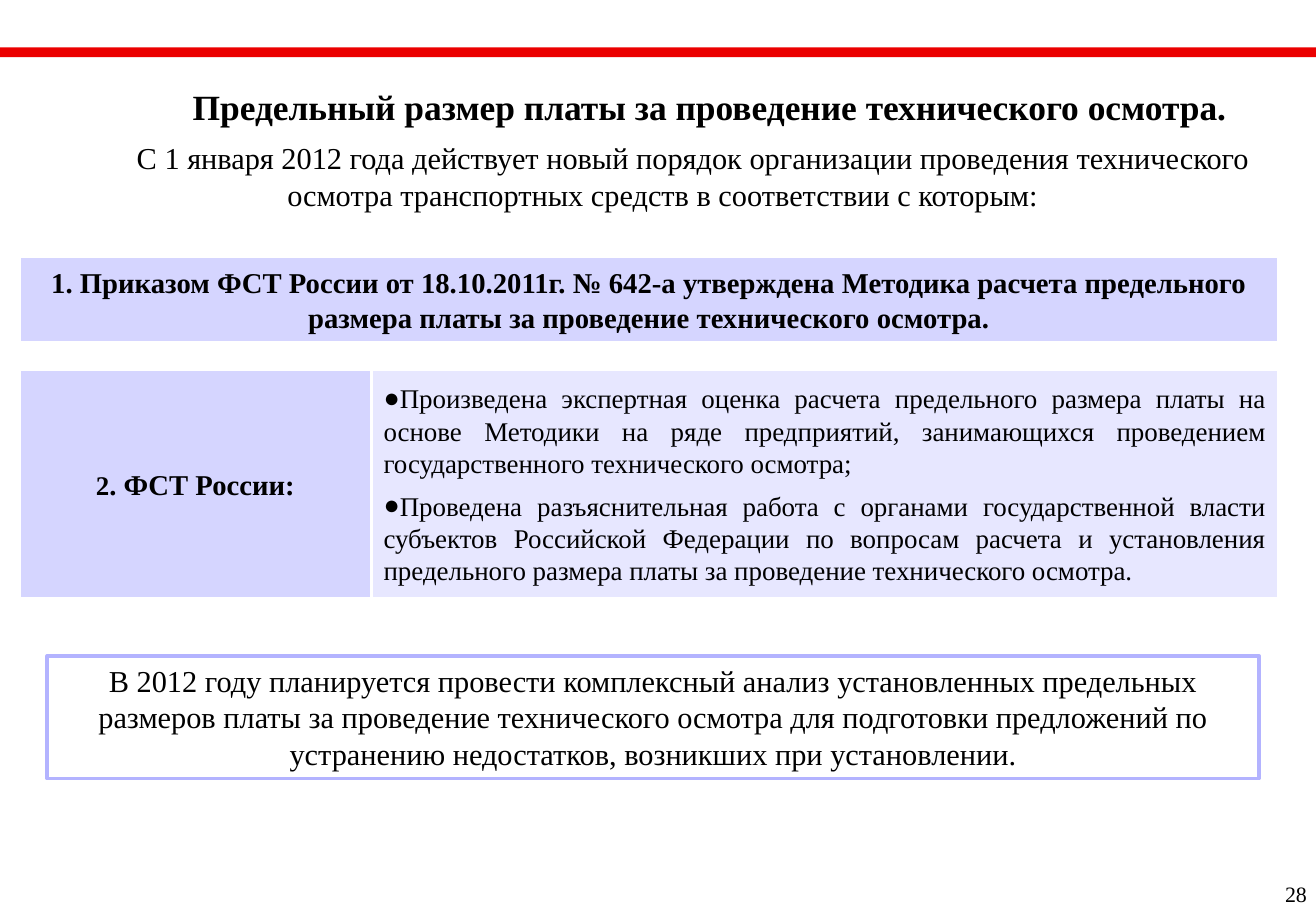
from dataclasses import dataclass

from lxml.etree import SubElement
from pptx import Presentation
from pptx.dml.color import RGBColor as RGB
from pptx.enum.shapes import MSO_SHAPE as SHAPE
from pptx.enum.text import MSO_ANCHOR as ANCHOR, MSO_AUTO_SIZE as FIT, PP_ALIGN as ALIGN
from pptx.oxml.ns import qn
from pptx.util import Inches, Pt


@dataclass(frozen=True)
class Theme:
    font: str = "Times New Roman"
    text: str = "000000"
    white: str = "FFFFFF"
    red: str = "EB0000"
    lilac: str = "D5D5FF"
    pale: str = "E7E7FF"
    frame: str = "B3B3FF"
    title: int = 21
    body: int = 18
    head: int = 17
    item: int = 16
    number: int = 13


T = Theme()


def place(shape, box):
    shape.left, shape.top, shape.width, shape.height = map(Inches, box)
    return shape


def write(tf, *paras, size=T.body, bold=False, align=ALIGN.CENTER,
          anchor=ANCHOR.TOP, wrap=True, indent=0, gap=0, bullet=None):
    """Each paragraph is a string or a list of (text, size) runs."""
    tf.word_wrap, tf.auto_size, tf.vertical_anchor = wrap, FIT.NONE, anchor
    for i, para in enumerate(paras):
        p = tf.add_paragraph() if i else tf.paragraphs[0]
        p.alignment = align
        p.space_before = Pt(gap if i else 0)
        pPr = p._p.get_or_add_pPr()
        pPr.set("marL", "0")
        pPr.set("indent", str(Inches(indent)))
        if bullet:
            SubElement(pPr, qn("a:buFont"), typeface=T.font)
            SubElement(pPr, qn("a:buChar"), char=bullet)
        for text, pt in [(para, size)] if isinstance(para, str) else para:
            r = p.add_run()
            r.text = text
            r.font.name, r.font.size, r.font.bold = T.font, Pt(pt), bold
            r.font.color.rgb = RGB.from_string(T.text)


def paint(shape, fill=None, line=None, width=2):
    if fill:
        shape.fill.solid()
        shape.fill.fore_color.rgb = RGB.from_string(fill)
    else:
        shape.fill.background()
    if line:
        shape.line.color.rgb = RGB.from_string(line)
        shape.line.width = Pt(width)
    else:
        shape.line.fill.background()


def panel(s, box, **look):
    sp = s.shapes.add_shape(SHAPE.RECTANGLE, *map(Inches, box))
    sp.shadow.inherit = False
    paint(sp, **look)
    return sp.text_frame


def text_box(s, box, text, **fmt):
    write(s.shapes.add_textbox(*map(Inches, box)).text_frame, text, **fmt)


def heading(s, box):
    x, y, w, h = box
    title = place(s.shapes.title, (x + 0.7, y, w - 0.63, 0.45))
    write(title.text_frame, "Предельный размер платы за проведение технического осмотра.",
          size=T.title, bold=True)
    text_box(s, (x, y + 0.45, w, h - 0.45),
             "С 1 января 2012 года действует новый порядок организации проведения "
             "технического осмотра транспортных средств в соответствии с которым:",
             indent=0.5)


def measures(s, box):
    x, y, w, h = box
    row_y, row_h, label_w = y + 0.93, h - 0.93, 2.9
    # Order banner
    tf = panel(s, (x, y, w, 0.71), fill=T.lilac, line=T.white)
    write(tf, "1. Приказом ФСТ России от 18.10.2011г. № 642-а утверждена Методика "
              "расчета предельного размера платы за проведение технического осмотра.",
          size=T.head, bold=True, anchor=ANCHOR.MIDDLE)
    # Row label
    tf = panel(s, (x, row_y, label_w, row_h), fill=T.lilac, line=T.white)
    write(tf, [("2", T.item), (". ФСТ России:", T.head)],
          bold=True, anchor=ANCHOR.MIDDLE)
    # Work done
    body = place(s.placeholders[1], (x + label_w, row_y, w - label_w, row_h))
    paint(body, fill=T.pale, line=T.white)
    write(body.text_frame,
          "Произведена экспертная оценка расчета предельного размера платы на основе "
          "Методики на ряде предприятий, занимающихся проведением государственного "
          "технического осмотра;",
          "Проведена разъяснительная работа с органами государственной власти субъектов "
          "Российской Федерации по вопросам расчета и установления предельного размера "
          "платы за проведение технического осмотра.",
          size=T.item, align=ALIGN.JUSTIFY, anchor=ANCHOR.MIDDLE, gap=6, bullet="●")


def plan(s, box):
    write(panel(s, box, line=T.frame, width=2.25),
          "В 2012 году планируется провести комплексный анализ установленных предельных "
          "размеров платы за проведение технического осмотра для подготовки предложений "
          "по устранению недостатков, возникших при установлении.")


def main():
    prs = Presentation()
    prs.slide_width, prs.slide_height = Inches(10.84), Inches(7.5)
    s = prs.slides.add_slide(prs.slide_layouts[1])
    panel(s, (0, 0.39, 10.84, 0.08), fill=T.red)
    heading(s, (0.39, 0.65, 10.14, 1.46))
    measures(s, (0.16, 2.11, 10.37, 2.82))
    plan(s, (0.39, 5.4, 9.98, 1.01))
    text_box(s, (10.48, 7.2, 0.39, 0.32), "28", size=T.number, wrap=False)
    prs.save("out.pptx")


if __name__ == "__main__":
    main()
